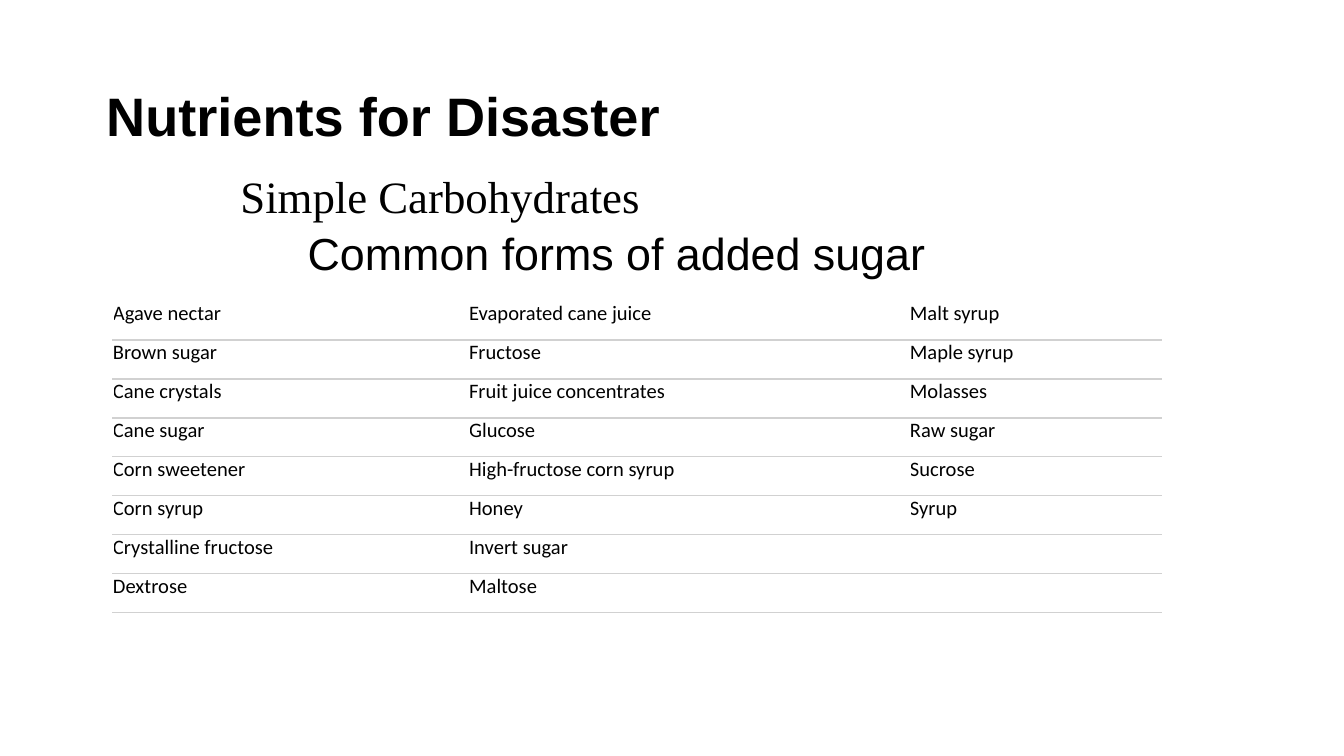
from itertools import zip_longest

from lxml import etree
from pptx import Presentation
from pptx import util as u
from pptx.dml.color import RGBColor
from pptx.enum import text
from pptx.oxml import ns

COLORS = {"ink": "000000", "rule": "D1D1D1"}
SUGARS = [
    ["Agave nectar", "Brown sugar", "Cane crystals", "Cane sugar",
     "Corn sweetener", "Corn syrup", "Crystalline fructose", "Dextrose"],
    ["Evaporated cane juice", "Fructose", "Fruit juice concentrates", "Glucose",
     "High-fructose corn syrup", "Honey", "Invert sugar", "Maltose"],
    ["Malt syrup", "Maple syrup", "Molasses", "Raw sugar", "Sucrose", "Syrup"],
]
COLUMN_WIDTHS = [2.65, 3.28, 1.87]
ROW_HEIGHT = 0.29


def style_font(para, name, size, bold=False):
    para.font.name = name
    para.font.size = u.Pt(size)
    para.font.bold = bold
    para.font.color.rgb = RGBColor.from_string(COLORS["ink"])


def add_border(cell, side):
    line = etree.SubElement(cell._tc.get_or_add_tcPr(), ns.qn(f"a:{side}"), w=str(u.Pt(0.75)))
    fill = etree.SubElement(line, ns.qn("a:solidFill"))
    etree.SubElement(fill, ns.qn("a:srgbClr"), val=COLORS["rule"])


deck = Presentation()
deck.slide_width = u.Inches(10)
deck.slide_height = u.Inches(10 * 9 / 16)
page = deck.slides.add_slide(deck.slide_layouts[5])

title = page.shapes.title
title.left, title.top = u.Inches(0.69), u.Inches(0.39)
title.width, title.height = u.Inches(8.62), u.Inches(0.99)
title.text_frame.text = "Nutrients for Disaster"
title.text_frame.vertical_anchor = text.MSO_ANCHOR.MIDDLE
para = title.text_frame.paragraphs[0]
para.alignment = text.PP_ALIGN.LEFT
para.line_spacing = 0.9
style_font(para, "Arial", 29, bold=True)

box = page.shapes.add_textbox(u.Inches(1.69), u.Inches(1.25), u.Inches(6.25), u.Inches(4.06))
box.text_frame.word_wrap = True
box.text_frame.text = "Simple Carbohydrates\nCommon forms of added sugar"
heading, subheading = box.text_frame.paragraphs
subheading.level = 1
subheading.space_before = u.Pt(5)
subheading._p.get_or_add_pPr().set("marL", str(u.Inches(0.5)))
for para, name in [(heading, "Times New Roman"), (subheading, "Arial")]:
    para.line_spacing = 0.9
    style_font(para, name, 24)

rows = list(zip_longest(*SUGARS, fillvalue=""))
table = page.shapes.add_table(
    len(rows), len(SUGARS), u.Inches(0.84), u.Inches(2.24),
    u.Inches(sum(COLUMN_WIDTHS)), u.Inches(ROW_HEIGHT * len(rows))).table
table.first_row = False
table.horz_banding = False
for column, width in zip(table.columns, COLUMN_WIDTHS):
    column.width = u.Inches(width)

for r, names in enumerate(rows):
    table.rows[r].height = u.Inches(ROW_HEIGHT)
    for c, name in enumerate(names):
        cell = table.cell(r, c)
        cell.margin_left = cell.margin_right = cell.margin_top = cell.margin_bottom = 0
        if r:
            add_border(cell, "lnT")
        add_border(cell, "lnB")
        cell.fill.background()
        para = cell.text_frame.paragraphs[0]
        style_font(para, "Calibri", 11)
        if name:
            para.add_run().text = name
        else:
            etree.SubElement(para._p, ns.qn("a:endParaRPr"), sz="1100")

deck.save("out.pptx")
